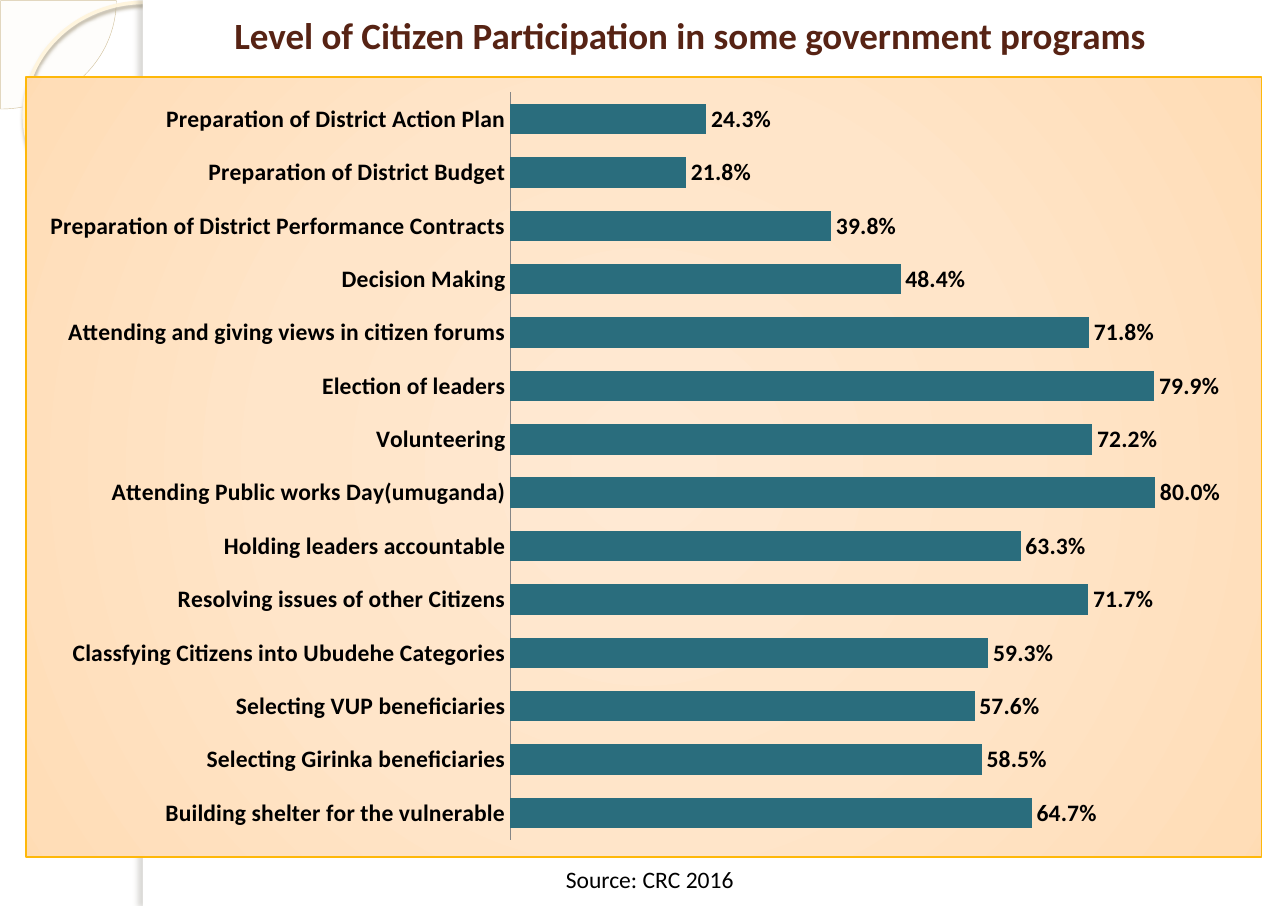
from lxml import etree
from pptx import Presentation
from pptx.chart.data import CategoryChartData
from pptx.dml.color import RGBColor
from pptx.enum.chart import XL_CHART_TYPE as ChartType
from pptx.enum.chart import XL_LABEL_POSITION as LabelPosition
from pptx.enum.chart import XL_TICK_LABEL_POSITION as TickLabel
from pptx.enum.chart import XL_TICK_MARK as TickMark
from pptx.enum.shapes import MSO_SHAPE as Preset
from pptx.enum.text import MSO_ANCHOR as Anchor
from pptx.enum.text import MSO_AUTO_SIZE as AutoSize
from pptx.enum.text import PP_ALIGN as Align
from pptx.oxml import parse_xml
from pptx.oxml.ns import nsdecls, qn
from pptx.util import Inches, Pt

FONT = "Calibri"
PERCENT = "0.0%"
PARTICIPATION = {
    "Preparation of District Action Plan": 0.243,
    "Preparation of District Budget": 0.218,
    "Preparation of District Performance Contracts": 0.398,
    "Decision Making": 0.484,
    "Attending and giving views in citizen forums": 0.718,
    "Election of leaders": 0.799,
    "Volunteering": 0.722,
    "Attending Public works Day(umuganda)": 0.8,
    "Holding leaders accountable": 0.633,
    "Resolving issues of other Citizens": 0.717,
    "Classfying Citizens into Ubudehe Categories": 0.593,
    "Selecting VUP beneficiaries": 0.576,
    "Selecting Girinka beneficiaries": 0.585,
    "Building shelter for the vulnerable": 0.647,
}
BACKGROUND_STOPS = [(0, "FFE9D3"), (50, "FFE5C9"), (97, "FFDDB7"), (100, "FFDBB2")]
PLOT_LAYOUT = {"x": 0.392, "y": 0.02, "w": 0.587, "h": 0.958}


def color(value):
    """Return the colour for a hex string."""
    return RGBColor.from_string(value)


def set_font(font, size, hex_color="000000", bold=False):
    """Apply the slide's typeface with a size, colour and weight."""
    values = {"name": FONT, "size": Pt(size), "bold": bold}
    for name, value in values.items():
        setattr(font, name, value)
    font.color.rgb = color(hex_color)


def place(shape, box):
    """Move a shape to left, top, width and height in inches."""
    for name, value in zip(("left", "top", "width", "height"), box):
        setattr(shape, name, Inches(value))


def add_shadow(shape, hex_color, alpha, blur, distance, angle):
    """Put an outer shadow in the shape's effect list."""
    effects = shape.element.spPr.find(qn("a:effectLst"))
    shadow = etree.SubElement(effects, qn("a:outerShdw"), blurRad=str(Pt(blur)),
                              dist=str(Pt(distance)), dir=str(angle * 60000), rotWithShape="0")
    tint = etree.SubElement(shadow, qn("a:srgbClr"), val=hex_color)
    etree.SubElement(tint, qn("a:alpha"), val=str(alpha * 1000))


def add_ornament(slide, preset, box, fill=None, alpha=100, line=None, shadow=None):
    """Add a decorative shape with optional fill, line and shadow."""
    shape = slide.shapes.add_shape(preset, *map(Inches, box))
    shape.shadow.inherit = False
    if fill:
        shape.fill.solid()
        shape.fill.fore_color.rgb = color(fill)
        if alpha < 100:
            tint = shape.element.spPr.find(f"{qn('a:solidFill')}/{qn('a:srgbClr')}")
            etree.SubElement(tint, qn("a:alpha"), val=str(alpha * 1000))
    else:
        shape.fill.background()
    if line:
        shape.line.color.rgb = color(line[0])
        shape.line.width = Pt(line[1])
    else:
        shape.line.fill.background()
    if shadow:
        add_shadow(shape, *shadow)
    return shape


def add_ornaments(slide):
    """Draw the corner circles and the white panel with its shaded edge."""
    quarter = add_ornament(slide, Preset.PIE, (-0.95, -0.89, 1.91, 1.79),
                           "FEFAF4", 33, ("D3C39F", 0.25))
    quarter.adjustments[0], quarter.adjustments[1] = 0, 54
    add_ornament(slide, Preset.OVAL, (0.2, 0.02, 1.98, 1.86),
                 line=("FFF5DE", 2.15), shadow=("B0A68F", 85, 2, 2, 90))
    add_ornament(slide, Preset.RECTANGLE, (1.18, 0, 9.45, 7.48), "FFFFFF")
    add_ornament(slide, Preset.RECTANGLE, (1.18, 0, 0.09, 7.48), "FFFFFF",
                 shadow=("736F63", 25, 3, 3, 180))


def set_title(slide, text):
    """Fill the title placeholder and bring it in front of the panel."""
    title = slide.shapes.title
    title.element.getparent().append(title.element)
    place(title, (1.05, 0, 9.29, 0.58))
    frame = title.text_frame
    format_frame(frame)
    frame.vertical_anchor = Anchor.MIDDLE
    para = frame.paragraphs[0]
    para.alignment = Align.CENTER
    span = para.add_run()
    span.text = text
    set_font(span.font, 22, "572314", True)


def format_frame(frame, wrap=True, auto_size=AutoSize.NONE):
    """Set the margins, wrapping and fitting of a text frame."""
    values = {"margin_left": Inches(0.11), "margin_right": Inches(0.11),
              "margin_top": Inches(0.06), "margin_bottom": Inches(0.06),
              "word_wrap": wrap, "auto_size": auto_size}
    for name, value in values.items():
        setattr(frame, name, value)


def add_source(slide, text):
    """Add the source line under the chart."""
    box = slide.shapes.add_textbox(*map(Inches, (4.56, 7.08, 1.7, 0.35)))
    format_frame(box.text_frame, False, AutoSize.SHAPE_TO_FIT_TEXT)
    span = box.text_frame.paragraphs[0].add_run()
    span.text = text
    set_font(span.font, 14)


def style_chart_area(chart):
    """Give the chart its radial background, border and plot position."""
    stops = "".join(f'<a:gs pos="{position * 1000}"><a:srgbClr val="{tint}"/></a:gs>'
                    for position, tint in BACKGROUND_STOPS)
    area = parse_xml(
        f'<c:spPr {nsdecls("c", "a")}><a:gradFill><a:gsLst>{stops}</a:gsLst>'
        '<a:path path="circle"><a:fillToRect l="50000" t="50000" r="50000" b="50000"/></a:path>'
        f'</a:gradFill><a:ln w="{Pt(0.75)}"><a:solidFill><a:srgbClr val="FEB80A"/>'
        '</a:solidFill></a:ln></c:spPr>')
    body = chart.element.find(qn("c:chart"))
    body.addnext(area)
    plot_area = body.find(qn("c:plotArea"))
    for old in plot_area.findall(qn("c:layout")):
        plot_area.remove(old)
    layout = etree.Element(qn("c:layout"))
    manual = etree.SubElement(layout, qn("c:manualLayout"))
    modes = {"layoutTarget": "inner", "xMode": "edge", "yMode": "edge"}
    for name, value in {**modes, **PLOT_LAYOUT}.items():
        etree.SubElement(manual, qn(f"c:{name}"), val=str(value))
    plot_area.insert(0, layout)


def style_axes(chart):
    """Show the categories from the top and hide the value axis."""
    categories, values = chart.category_axis, chart.value_axis
    formats = {
        categories: {"reverse_order": True, "major_tick_mark": TickMark.NONE,
                     "minor_tick_mark": TickMark.NONE, "has_major_gridlines": False,
                     "tick_label_position": TickLabel.NEXT_TO_AXIS},
        values: {"visible": False, "has_major_gridlines": False,
                 "minimum_scale": 0, "maximum_scale": 0.9},
    }
    for axis, settings in formats.items():
        for name, value in settings.items():
            setattr(axis, name, value)
    set_font(categories.tick_labels.font, 14, bold=True)
    categories.format.line.color.rgb = color("868686")
    categories.format.line.width = Pt(0.75)


def add_participation_chart(slide):
    """Add the bar chart of participation by programme."""
    data = CategoryChartData(number_format=PERCENT)
    data.categories = list(PARTICIPATION)
    data.add_series("Series 1", list(PARTICIPATION.values()))
    box = map(Inches, (0.21, 0.63, 10.21, 6.45))
    chart = slide.shapes.add_chart(ChartType.BAR_CLUSTERED, *box, data).chart
    chart.has_legend = chart.has_title = False
    set_font(chart.font, 10)
    style_chart_area(chart)
    style_axes(chart)
    plot = chart.plots[0]
    plot.gap_width = 75
    plot.vary_by_categories = False
    series = plot.series[0]
    series.format.fill.solid()
    series.format.fill.fore_color.rgb = color("2A6D7D")
    labels = series.data_labels
    settings = {"show_value": True, "number_format": PERCENT,
                "number_format_is_linked": False, "position": LabelPosition.OUTSIDE_END}
    for name, value in settings.items():
        setattr(labels, name, value)
    set_font(labels.font, 14, bold=True)


def main():
    """Build the slide and save the deck."""
    deck = Presentation()
    deck.slide_width, deck.slide_height = Inches(10.63), Inches(7.48)
    slide = deck.slides.add_slide(deck.slide_layouts[5])
    add_ornaments(slide)
    set_title(slide, "Level of Citizen Participation in some government programs")
    add_participation_chart(slide)
    add_source(slide, "Source: CRC 2016")
    deck.save("out.pptx")


if __name__ == "__main__":
    main()
